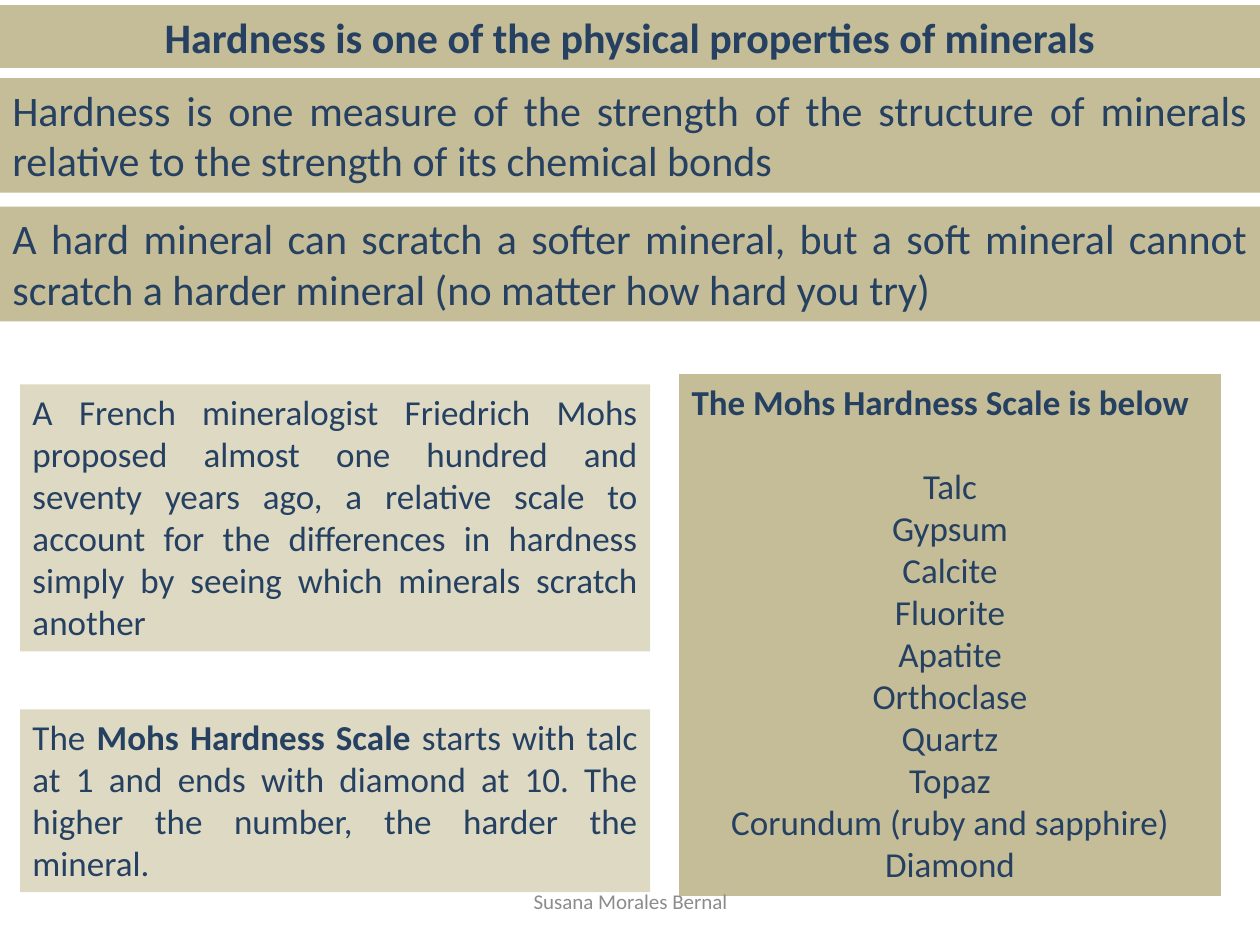
import pptx
import pptx.dml.color
import pptx.enum.text
import pptx.util

Inches = pptx.util.Inches
Pt = pptx.util.Pt
RGBColor = pptx.dml.color.RGBColor
ALIGN = pptx.enum.text.PP_ALIGN
ANCHOR = pptx.enum.text.MSO_ANCHOR

NAVY = RGBColor(0x25, 0x40, 0x61)
GRAY = RGBColor(0x8C, 0x8C, 0x8C)
TAN = RGBColor(0xC4, 0xBD, 0x97)
LIGHT_TAN = RGBColor(0xDD, 0xD9, 0xC3)


def add_paragraph(paragraph, text, size=20, color=NAVY, align=ALIGN.JUSTIFY, space_after=0):
    """Fill a paragraph with text, where **double asterisks** mark bold."""
    paragraph.alignment = align
    paragraph.space_after = Pt(space_after)
    for index, part in enumerate(text.split("**")):
        if part:
            run = paragraph.add_run()
            run.text = part
            run.font.name = "Calibri"
            run.font.size = Pt(size)
            run.font.bold = index % 2 == 1
            run.font.color.rgb = color


def add_box(slide, left, top, width, height, fill=None, anchor=ANCHOR.TOP):
    """Add a wrapping text box and return its text frame."""
    box = slide.shapes.add_textbox(Inches(left), Inches(top), Inches(width), Inches(height))
    if fill is not None:
        box.fill.solid()
        box.fill.fore_color.rgb = fill
    box.text_frame.word_wrap = True
    box.text_frame.vertical_anchor = anchor
    return box.text_frame


presentation = pptx.Presentation()
presentation.slide_width = Inches(10)
presentation.slide_height = Inches(7.5)
slide = presentation.slides.add_slide(presentation.slide_layouts[6])

# Mohs scale panel
minerals = [
    "Talc", "Gypsum", "Calcite", "Fluorite", "Apatite", "Orthoclase",
    "Quartz", "Topaz", "Corundum (ruby and sapphire)", "Diamond",
]
scale_frame = add_box(slide, 5.39, 2.97, 4.3, 4.14, fill=TAN)
add_paragraph(scale_frame.paragraphs[0], "**The Mohs Hardness Scale is below**",
              align=ALIGN.LEFT, space_after=24)
for mineral in minerals:
    add_paragraph(scale_frame.add_paragraph(), mineral, align=ALIGN.CENTER)

# Full-width bands
bands = [
    (0.04, 0.5, ALIGN.CENTER, "**Hardness is one of the physical properties of minerals**"),
    (0.62, 0.91, ALIGN.JUSTIFY,
     "Hardness is one measure of the strength of the structure of minerals "
     "relative to the strength of its chemical bonds"),
    (1.64, 0.91, ALIGN.JUSTIFY,
     "A hard mineral can scratch a softer mineral, but a soft mineral cannot "
     "scratch a harder mineral (no matter how hard you try)"),
]
for top, height, align, text in bands:
    frame = add_box(slide, 0, top, 10, height, fill=TAN)
    add_paragraph(frame.paragraphs[0], text, size=24, align=align)

# Notes on the left
notes = [
    (3.05, 2.12,
     "A French mineralogist Friedrich Mohs proposed almost one hundred and seventy "
     "years ago, a relative scale to account for the differences in hardness simply "
     "by seeing which minerals scratch another"),
    (5.63, 1.45,
     "The **Mohs Hardness Scale** starts with talc at 1 and ends with diamond at 10. "
     "The higher the number, the harder the mineral."),
]
for top, height, text in notes:
    frame = add_box(slide, 0.16, top, 5, height, fill=LIGHT_TAN)
    add_paragraph(frame.paragraphs[0], text)

# Footer
footer_frame = add_box(slide, 3.42, 6.95, 3.17, 0.4, anchor=ANCHOR.MIDDLE)
add_paragraph(footer_frame.paragraphs[0], "Susana Morales Bernal",
              size=12, color=GRAY, align=ALIGN.CENTER)

presentation.save("out.pptx")
